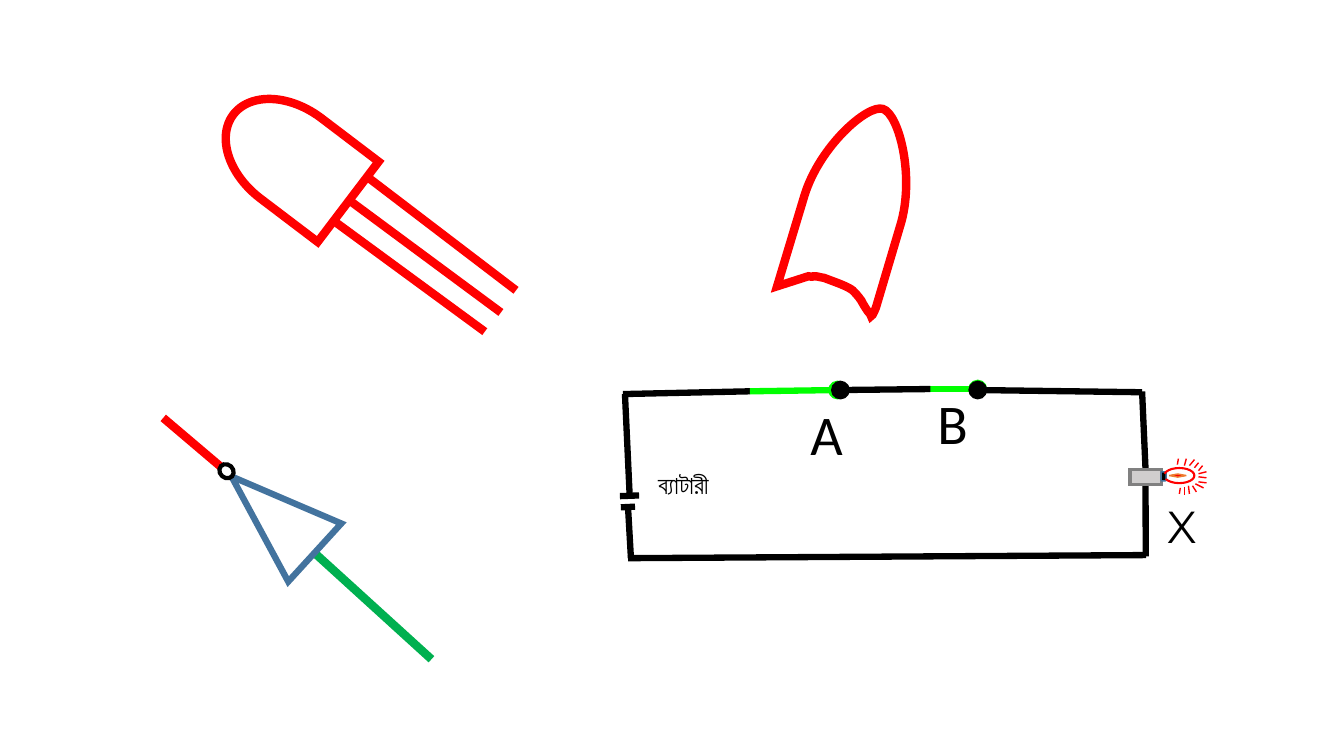
import math
from dataclasses import dataclass
from typing import Any, Optional

from lxml import etree
from pptx import Presentation
from pptx import util as u
from pptx.dml import color
from pptx.enum import shapes, text
from pptx.oxml import ns

COLOURS = {
    "red": "FF0000", "green": "00B050", "lime": "00FF00", "black": "000000",
    "white": "FFFFFF", "blue": "43739E", "grey": "808080", "silver": "D0CECE",
    "orange": "ED7D31",
}
Point = tuple[float, float]


@dataclass
class Wire:
    start: Point
    end: Point
    colour: str = "black"
    weight: float = 4.5
    dot: bool = False


@dataclass
class Part:
    kind: Any
    frame: tuple[float, float, float, float]
    line: str
    weight: float
    fill: Optional[str] = None
    turn: float = 0
    angles: tuple[float, ...] = ()


@dataclass
class Label:
    words: str
    frame: tuple[float, float, float, float]
    size: float
    face: str = "Calibri"
    wrap: bool = True


def rgb(name: str) -> color.RGBColor:
    return color.RGBColor.from_string(COLOURS[name])


def add_xml(parent: Any, tag: str, **attributes: str) -> Any:
    return etree.SubElement(parent, ns.qn(tag), **attributes)


def set_outline(item: Any, colour: str, weight: float) -> Any:
    item.line.color.rgb = rgb(colour)
    item.line.width = u.Pt(weight)
    outline = item.element.spPr.find(ns.qn("a:ln"))
    add_xml(outline, "a:miter", lim="800000")
    return outline


def draw_wire(target: Any, wire: Wire) -> Any:
    ends = [u.Pt(n) for n in wire.start + wire.end]
    connector = target.add_connector(shapes.MSO_CONNECTOR.STRAIGHT, *ends)
    outline = set_outline(connector, wire.colour, wire.weight)
    if wire.dot:
        add_xml(outline, "a:tailEnd", type="oval")
    add_xml(connector.element.spPr, "a:effectLst")
    return connector


def finish(shape: Any, line: str, weight: float, fill: Optional[str]) -> None:
    if fill:
        shape.fill.solid()
        shape.fill.fore_color.rgb = rgb(fill)
    else:
        shape.fill.background()
    set_outline(shape, line, weight)
    shape.shadow.inherit = False


def draw_part(target: Any, part: Part) -> Any:
    shape = target.add_shape(part.kind, *[u.Pt(n) for n in part.frame])
    shape.rotation = part.turn
    for index, angle in enumerate(part.angles):
        shape.adjustments[index] = angle
    finish(shape, part.line, part.weight, part.fill)
    return shape


def draw_label(target: Any, label: Label) -> None:
    box = target.add_textbox(*[u.Pt(n) for n in label.frame])
    box.text_frame.word_wrap = label.wrap
    box.text_frame.auto_size = text.MSO_AUTO_SIZE.SHAPE_TO_FIT_TEXT
    para = box.text_frame.paragraphs[0]
    span = para.add_run()
    span.text = label.words
    span.font.name = label.face
    span.font.size = u.Pt(label.size)
    span.font.color.rgb = rgb("black")


# Flame: one point is a straight edge, three points are a curve
FLAME_TURN = 287.2
FLAME_CENTRE = (610.2, 146.9)
FLAME_START = (555.1, 204.5)
FLAME_EDGES = [
    [(574.6, 139.7)],
    [(585.4, 104.4), (619.9, 74.2), (630.7, 77.8)],
    [(642.2, 81.4), (653.8, 126.7), (643, 161.3)],
    [(625.7, 219.6)],
    [(621.4, 230.4), (622.1, 223.9), (621.4, 223.9)],
    [(620.6, 223.9), (615.6, 216), (614.9, 213.8)],
    [(614.2, 212.4), (617.8, 219.6), (616.3, 216.7)],
    [(614.9, 213.8), (612.7, 211), (609.1, 207.4)],
    [(605.5, 204.5), (596.9, 201.6), (593.3, 200.2)],
    [(589, 198.7), (588.2, 198), (586.1, 198)],
    [(583.9, 197.3), (582.5, 197.3), (581, 197.3)],
    [(580.3, 197.3), (581, 198), (577.4, 197.3)],
]

KIND = shapes.MSO_SHAPE
TRANSISTOR = [
    Wire((368.6, 207.4), (262.8, 126.7), "red", 6),
    Wire((346.3, 236.9), (238.3, 157.7), "red", 6),
    Wire((357.8, 223.2), (249.8, 143.3), "red", 6),
    Part(KIND.FLOWCHART_DELAY, (156.2, 77, 103, 72), "red", 6, turn=217.2),
]
INVERTER = [
    Wire((308.2, 470.9), (225.4, 395.6), "green", 6),
    Part(KIND.FLOWCHART_MERGE, (167, 327.2, 56.2, 80.6), "blue", 4.5, turn=132.4),
    Wire((157.7, 333.4), (116.6, 298.5), "red", 6),
    Part(KIND.OVAL, (156.4, 331.9, 10.8, 9.4), "black", 3, "white", 222.4),
]
CIRCUIT = [
    Wire((448.6, 398.7), (818.6, 396.5)),
    Wire((445, 281.5), (535.7, 279.5)),
    Wire((446.4, 281.5), (449.8, 354.2)),
    Wire((448.6, 362.2), (450.7, 398.9)),
    Wire((453.6, 361.9), (443.5, 362.4)),
    Wire((456.5, 353.9), (442.8, 354.4)),
    Wire((535.7, 279.5), (598.3, 278.6), "lime", dot=True),
    Wire((664.6, 277.9), (698.4, 277.9), "lime", dot=True),
    Wire((815.8, 280.2), (698.4, 278.6), dot=True),
    Wire((664.6, 277.9), (600.3, 278.6), dot=True),
]
LAMP_IN = Wire((815.8, 279.6), (818.2, 335.2))
LAMP_OUT = Wire((818.2, 346), (818.4, 397.4))
LAMP_BASE = Part(KIND.RECTANGLE, (807.1, 335.2, 22.3, 10.8), "grey", 2.25, "silver")
RAYS = [
    ((846, 332.6), (847.4, 327.6)), ((849.6, 332.6), (853.2, 328.3)),
    ((853.2, 334.1), (856.1, 330.5)), ((842.4, 352.8), (843.1, 348.5)),
    ((846, 353.5), (846, 347.8)), ((854.6, 351.4), (851.8, 347)),
    ((861.8, 341.3), (856.1, 340.6)), ((861.8, 337), (856.1, 338.4)),
    ((859, 332.6), (856.1, 336.2)), ((861.8, 344.9), (856.1, 344.2)),
    ((859.7, 348.5), (853.9, 345.6)), ((849.6, 352.8), (848.9, 347)),
    ((841, 331.9), (841.7, 327.6)),
]
LAMP = [
    Part(KIND.FLOWCHART_ALTERNATE_PROCESS, (829.4, 337, 3.6, 6.5), "blue", 1, "black"),
    Part(KIND.ARC, (831.6, 334.3, 21.6, 10.8), "red", 1.5, angles=(112.38, 99.25)),
    *[Wire(start, end, "red", 1) for start, end in RAYS],
    Part(KIND.FLOWCHART_DECISION, (835.2, 338.6, 12.2, 2.2), "orange", 1, "red"),
]
LABELS = [
    Label("A", (571.7, 281.5, 27.4, 37.4), 40),
    Label("B", (662.4, 274.3, 27.4, 37.4), 40),
    Label("X", (826.6, 352.8, 31, 31), 32, "Montserrat", False),
    Label("ব্যাটারী", (463, 331.5, 67.7, 28.8), 18),
]


def draw_all(target: Any, items: list) -> None:
    painters = {Wire: draw_wire, Part: draw_part, Label: draw_label}
    for item in items:
        painters[type(item)](target, item)


def turn_about(point: Point, centre: Point, degrees: float) -> Point:
    cos, sin = math.cos(math.radians(degrees)), math.sin(math.radians(degrees))
    dx, dy = point[0] - centre[0], point[1] - centre[1]
    return centre[0] + dx * cos - dy * sin, centre[1] + dx * sin + dy * cos


def draw_flame(target: Any) -> None:
    centre = tuple(u.Pt(n) for n in FLAME_CENTRE)
    start, *edges = [
        [turn_about((u.Pt(x), u.Pt(y)), centre, -FLAME_TURN) for x, y in edge]
        for edge in [[FLAME_START], *FLAME_EDGES]]
    builder = target.build_freeform(*start[0])
    builder.add_line_segments([edge[-1] for edge in edges], close=True)
    flame = builder.convert_to_shape()

    # Bend the edges that have control points
    straight = list(flame.element.iter(ns.qn("a:lnTo")))
    for node, edge in zip(straight, edges):
        if len(edge) == 3:
            bend = etree.Element(ns.qn("a:cubicBezTo"))
            for x, y in edge:
                add_xml(bend, "a:pt", x=str(round(x - flame.left)), y=str(round(y - flame.top)))
            node.getparent().replace(node, bend)

    # Turn the flame into place
    middle = (flame.left + flame.width / 2, flame.top + flame.height / 2)
    x, y = turn_about(middle, centre, FLAME_TURN)
    flame.left, flame.top = round(x - flame.width / 2), round(y - flame.height / 2)
    flame.rotation = FLAME_TURN
    finish(flame, "red", 6, None)


deck = Presentation()
deck.slide_width, deck.slide_height = u.Pt(960), u.Pt(540)
page = deck.slides.add_slide(deck.slide_layouts[6])
draw_flame(page.shapes)
for items in (TRANSISTOR, INVERTER):
    draw_all(page.shapes.add_group_shape().shapes, items)

# Circuit with battery, switch and lamp
circuit = page.shapes.add_group_shape().shapes
draw_all(circuit, CIRCUIT)
lamp_in, lamp_out = draw_wire(circuit, LAMP_IN), draw_wire(circuit, LAMP_OUT)
lamp_base = draw_part(circuit, LAMP_BASE)
lamp_in.end_connect(lamp_base, 0)
lamp_out.begin_connect(lamp_base, 2)
draw_all(circuit, LAMP + LABELS)
deck.save("out.pptx")
